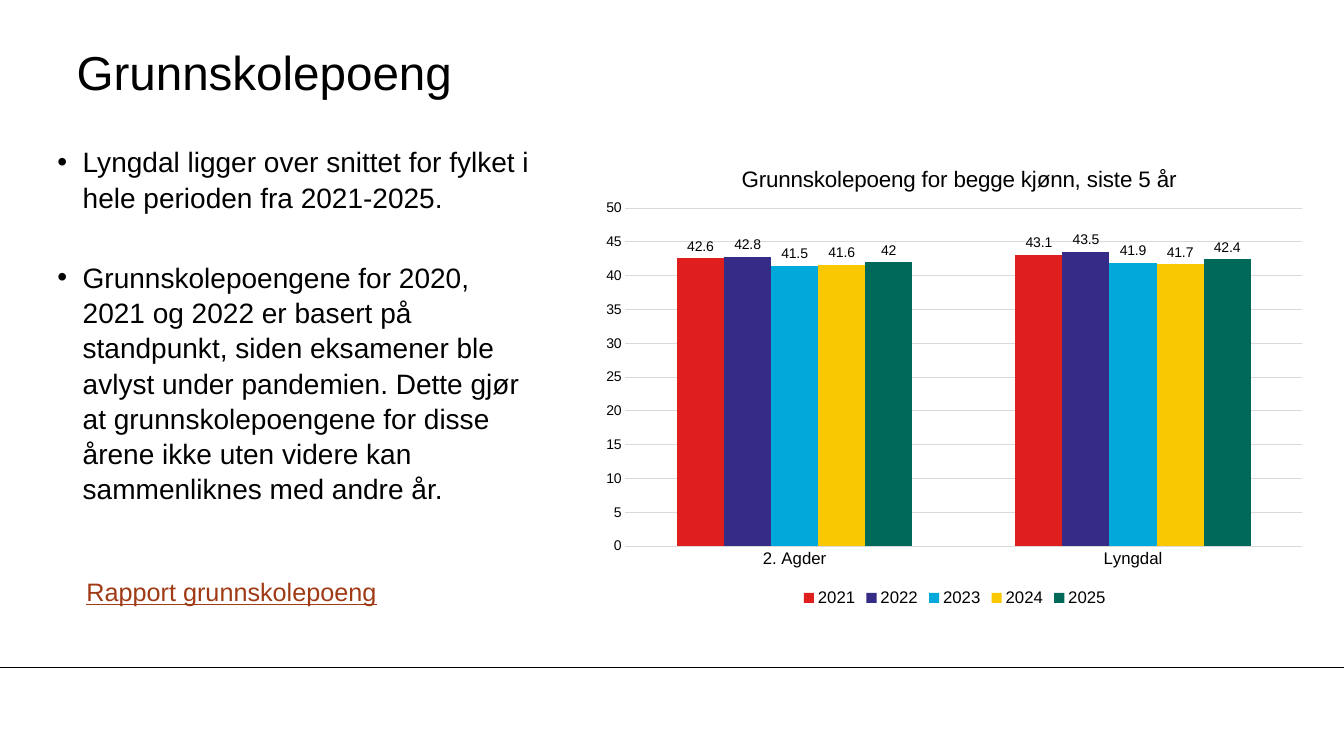
from lxml.etree import SubElement
from pptx import Presentation
from pptx.chart.data import CategoryChartData
from pptx.dml.color import RGBColor
from pptx.enum.chart import XL_CHART_TYPE, XL_LEGEND_POSITION, XL_LABEL_POSITION, XL_TICK_MARK
from pptx.enum.shapes import MSO_CONNECTOR
from pptx.enum.text import MSO_ANCHOR, MSO_AUTO_SIZE, PP_ALIGN
from pptx.oxml import parse_xml
from pptx.oxml.ns import nsdecls, qn
from pptx.util import Inches, Pt

BLACK = RGBColor(0, 0, 0)
GREY = RGBColor(0xD9, 0xD9, 0xD9)
RUST = RGBColor(0x9F, 0x3A, 0x14)

TITLE = "Grunnskolepoeng"
POINTS = [
    "Lyngdal ligger over snittet for fylket i hele perioden fra 2021-2025.",
    "Grunnskolepoengene for 2020, 2021 og 2022 er basert på standpunkt, siden "
    "eksamener ble avlyst under pandemien. Dette gjør at grunnskolepoengene for "
    "disse årene ikke uten videre kan sammenliknes med andre år.",
]
REPORT = "Rapport grunnskolepoeng"
HEADING = "Grunnskolepoeng for begge kjønn, siste 5 år"
AREAS = ["2. Agder", "Lyngdal"]
YEARS = [
    ("2021", (42.6, 43.1), RGBColor(0xDF, 0x1F, 0x1D)),
    ("2022", (42.8, 43.5), RGBColor(0x34, 0x2C, 0x86)),
    ("2023", (41.5, 41.9), RGBColor(0x00, 0xA9, 0xDA)),
    ("2024", (41.6, 41.7), RGBColor(0xFA, 0xC8, 0x00)),
    ("2025", (42, 42.4), RGBColor(0x00, 0x69, 0x5A)),
]


def style(font, size, color=BLACK):
    font.name = "Arial"
    font.size = Pt(size)
    font.bold = False
    font.color.rgb = color


def place(shape, *box):
    shape.left, shape.top, shape.width, shape.height = map(Inches, box)


def clear(frame):
    """Remove insets and automatic fitting from a text frame."""
    frame.margin_left = frame.margin_right = 0
    frame.margin_top = frame.margin_bottom = 0
    frame.word_wrap = True
    frame.auto_size = MSO_AUTO_SIZE.NONE


def add_run(para, text, size, color=BLACK):
    run = para.add_run()
    run.text = text
    style(run.font, size, color)
    return run


def pin(part, index, **spots):
    """Fix a chart part at fractions of the chart area."""
    old = part.find(qn("c:layout"))
    if old is not None:
        part.remove(old)
    layout = parse_xml(f"<c:layout {nsdecls('c')}><c:manualLayout/></c:layout>")
    for tag, val in spots.items():
        SubElement(layout[0], qn(f"c:{tag}")).set("val", str(val))
    part.insert(index, layout)


def add_title(slide):
    title = slide.shapes.title
    place(title, 0.76, 0.33, 11.1, 0.75)
    frame = title.text_frame
    clear(frame)
    frame.vertical_anchor = MSO_ANCHOR.MIDDLE
    para = frame.paragraphs[0]
    para.alignment = PP_ALIGN.LEFT
    add_run(para, TITLE, 34)


def add_points(slide):
    body = slide.placeholders[1]
    place(body, 0.57, 1.42, 4.72, 3.78)
    frame = body.text_frame
    clear(frame)
    for i, text in enumerate(POINTS):
        para = frame.add_paragraph() if i else frame.paragraphs[0]
        props = para._p.get_or_add_pPr()
        props.set("marL", str(Inches(0.25)))
        props.set("indent", str(-Inches(0.25)))
        para.line_spacing = 1.05
        para.space_before = Pt(32 if i else 0)
        SubElement(props, qn("a:buFont")).set("typeface", "Arial")
        SubElement(props, qn("a:buChar")).set("char", "•")
        add_run(para, text, 20)


def add_report(slide):
    box = slide.shapes.add_textbox(*map(Inches, (0.76, 5.67, 3.3, 0.4)))
    box.text_frame.word_wrap = True
    add_run(box.text_frame.paragraphs[0], REPORT, 18, RUST).font.underline = True


def add_rule(slide):
    rule = slide.shapes.add_connector(
        MSO_CONNECTOR.STRAIGHT, 0, Inches(6.62), Inches(13.33), Inches(6.62))
    rule.line.color.rgb = BLACK
    rule.line.width = Pt(0.75)
    SubElement(rule._element.spPr, qn("a:effectLst"))


def add_bars(slide):
    data = CategoryChartData()
    data.categories = AREAS
    for year, vals, _ in YEARS:
        data.add_series(year, vals)
    chart = slide.shapes.add_chart(
        XL_CHART_TYPE.COLUMN_CLUSTERED,
        *map(Inches, (5.88, 1.41, 7.18, 4.65)), data).chart
    style(chart.font, 10)
    chart.has_title = True
    add_run(chart.chart_title.text_frame.paragraphs[0], HEADING, 16)
    chart.chart_title.include_in_layout = False
    chart.has_legend = True
    chart.legend.position = XL_LEGEND_POSITION.BOTTOM
    chart.legend.include_in_layout = False
    style(chart.legend.font, 12)

    cats, scale = chart.category_axis, chart.value_axis
    for axis, size in ((cats, 12), (scale, 10)):
        axis.major_tick_mark = axis.minor_tick_mark = XL_TICK_MARK.NONE
        style(axis.tick_labels.font, size)
    scale.minimum_scale, scale.maximum_scale, scale.major_unit = 0, 50, 5
    scale.format.line.fill.background()
    for line in (cats.format.line, scale.major_gridlines.format.line):
        line.color.rgb = GREY
        line.width = Pt(0.75)

    plot = chart.plots[0]
    plot.gap_width, plot.overlap = 219, 0
    plot.vary_by_categories = False
    for series, (_, _, color) in zip(plot.series, YEARS):
        series.format.fill.solid()
        series.format.fill.fore_color.rgb = color
        labels = series.data_labels
        labels.show_value = True
        labels.position = XL_LABEL_POSITION.OUTSIDE_END
        style(labels.font, 10)

    root = chart.element
    pin(root.xpath("c:chart/c:title")[0], 1, xMode="edge", yMode="edge", x=0.2, y=0.04)
    pin(root.xpath("c:chart/c:plotArea")[0], 0, layoutTarget="inner",
        xMode="edge", yMode="edge", x=0.045, y=0.141, w=0.935, h=0.721)


def main():
    deck = Presentation()
    deck.slide_width, deck.slide_height = Inches(13.33), Inches(7.5)
    slide = deck.slides.add_slide(deck.slide_layouts[1])
    add_rule(slide)
    add_title(slide)
    add_points(slide)
    add_report(slide)
    add_bars(slide)
    deck.save("out.pptx")


if __name__ == "__main__":
    main()
